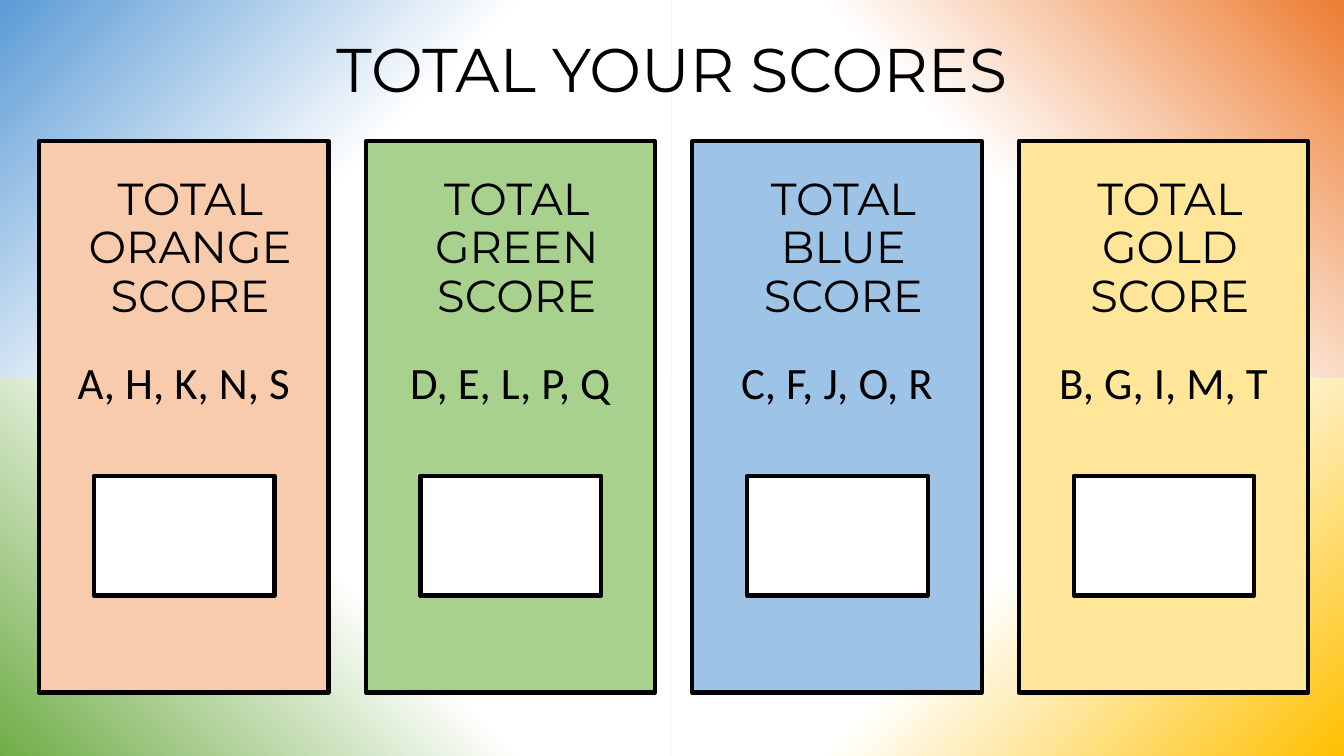
import pptx
import pptx.util
import pptx.dml.color
import pptx.enum.shapes
import pptx.enum.text

Cm, Pt = pptx.util.Cm, pptx.util.Pt
RECT = pptx.enum.shapes.MSO_SHAPE.RECTANGLE
ALIGN = pptx.enum.text.PP_ALIGN
ANCHOR = pptx.enum.text.MSO_ANCHOR

# Content
TITLE = "TOTAL YOUR SCORES"
CARDS = [
    ("ORANGE", "A, H, K, N, S", "F8CBAD"),
    ("GREEN", "D, E, L, P, Q", "A9D18E"),
    ("BLUE", "C, F, J, O, R", "9DC3E6"),
    ("GOLD", "B, G, I, M, T", "FFE699"),
]
# Corner washes: column, row, colour, counter-clockwise angle
CORNERS = [
    (0, 0, "5B9BD5", 315),
    (1, 0, "ED7D31", 225),
    (0, 1, "70AD47", 45),
    (1, 1, "FFC000", 135),
]

# Layout in cm
WIDE, HIGH = 33.87, 19.05
LEFT, TOP, STEP = 0.99, 3.56, 8.23
CARD_W, CARD_H = 7.29, 13.89
BOX_X, BOX_Y, BOX_W, BOX_H = 1.38, 11.99, 4.55, 3.02


def color(code):
    return pptx.dml.color.RGBColor.from_string(code)


def add_rect(x, y, w, h, fill=None):
    rect = slide.shapes.add_shape(RECT, Cm(x), Cm(y), Cm(w), Cm(h))
    rect.shadow.inherit = False
    if fill:
        rect.fill.solid()
        rect.fill.fore_color.rgb = color(fill)
        rect.line.color.rgb = color("000000")
        rect.line.width = Pt(3)
    else:
        rect.line.fill.background()
    return rect


def add_run(para, text, size, font):
    run = para.add_run()
    run.text = text
    run.font.size = Pt(size)
    run.font.name = font
    run.font.color.rgb = color("000000")


deck = pptx.Presentation()
deck.slide_width, deck.slide_height = Cm(WIDE), Cm(HIGH)
slide = deck.slides.add_slide(deck.slide_layouts[6])

# Background washes
for col, row, tint, angle in CORNERS:
    wash = add_rect(col * WIDE / 2, row * HIGH / 2, WIDE / 2, HIGH / 2)
    wash.fill.gradient()
    wash.fill.gradient_angle = angle
    for stop, code, place in zip(wash.fill.gradient_stops, (tint, "FFFFFF"), (0, 0.5)):
        stop.color.rgb = color(code)
        stop.position = place

# Title
head = slide.shapes.add_textbox(Cm(2.33), Cm(0), Cm(29.21), Cm(3.68)).text_frame
head.word_wrap = True
head.vertical_anchor = ANCHOR.MIDDLE
para = head.paragraphs[0]
para.alignment = ALIGN.CENTER
para.line_spacing = 0.9
add_run(para, TITLE, 44, "Montserrat")

# Score cards
for i, (name, keys, tint) in enumerate(CARDS):
    x = LEFT + i * STEP
    frame = add_rect(x, TOP, CARD_W, CARD_H, tint).text_frame
    frame.word_wrap = True
    frame.vertical_anchor = ANCHOR.TOP
    frame.margin_top = Cm(0.89)

    label = frame.paragraphs[0]
    label.alignment = ALIGN.CENTER
    label.line_spacing = 0.9
    label.space_after = Pt(12)
    label._p.get_or_add_pPr().set("marL", str(Cm(0.32)))
    add_run(label, "TOTAL", 32, "Montserrat")
    label.add_line_break()
    add_run(label, f"{name} SCORE", 32, "Montserrat")

    items = frame.add_paragraph()
    items.alignment = ALIGN.CENTER
    items.line_spacing = 1.2
    items.space_before = Pt(4)
    add_run(items, keys, 32, "Calibri")

    add_rect(x + BOX_X, BOX_Y, BOX_W, BOX_H, "FFFFFF")

deck.save("out.pptx")
